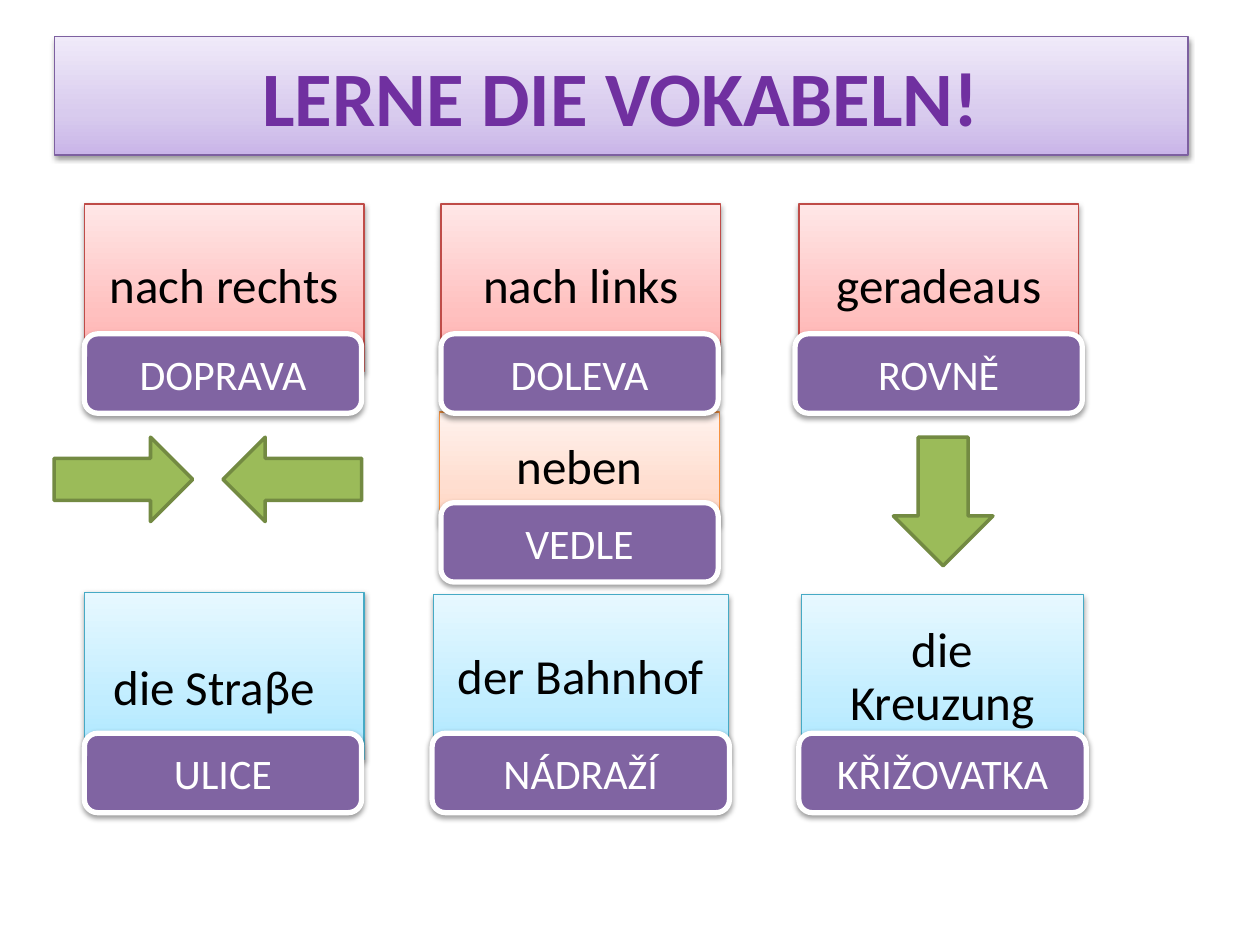
from dataclasses import dataclass

from pptx import Presentation
from pptx.dml.color import RGBColor
from pptx.enum.shapes import MSO_SHAPE as Shape
from pptx.enum.text import MSO_ANCHOR as Anchor, PP_ALIGN as Align
from pptx.oxml import parse_xml
from pptx.oxml.ns import nsdecls, qn
from pptx.util import Inches, Pt

GRID_COLS, GRID_ROWS = 100, 75


@dataclass(frozen=True)
class Theme:
    font: str = "Calibri"
    title_size: int = 44
    word_size: int = 28
    label_size: int = 24
    spacer_size: int = 52
    title_text: str = "7030A0"
    word_text: str = "000000"
    label_text: str = "FFFFFF"
    label_fill: str = "8064A2"
    label_line: str = "FFFFFF"
    arrow_fill: str = "9BBB59"
    arrow_line: str = "738A42"
    # Each palette: outline, then gradient colours from bottom to top
    purple: tuple = ("7D60A0", "C9B5E8", "D8CBEE", "F0EAF9")
    red: tuple = ("BF4C48", "FFA6A5", "FFC0BF", "FFE7E7")
    orange: tuple = ("F69240", "FFD2BD", "FFDED0", "FFF2ED")
    blue: tuple = ("46AAC5", "A7E6FF", "C1EDFF", "E7F8FF")


class VocabularyPage:
    def __init__(self, deck, theme):
        self.theme = theme
        self.page = deck.slides.add_slide(deck.slide_layouts[5])
        self.cell_width = deck.slide_width / GRID_COLS
        self.cell_height = deck.slide_height / GRID_ROWS

    def box(self, col, row, cols, rows):
        """Turn grid cells into left, top, width and height."""
        return (round(col * self.cell_width), round(row * self.cell_height),
                round(cols * self.cell_width), round(rows * self.cell_height))

    def add_plain(self, kind, cells):
        shape = self.page.shapes.add_shape(kind, *self.box(*cells))
        shape.shadow.inherit = False
        return shape

    def outline(self, shape, color, width):
        shape.line.color.rgb = RGBColor.from_string(color)
        shape.line.width = Pt(width)

    def paint(self, shape, color):
        shape.fill.solid()
        shape.fill.fore_color.rgb = RGBColor.from_string(color)

    def gloss(self, shape, palette):
        """Apply a three-stop gradient, a thin outline and a shadow."""
        line, *colors = palette
        shape.fill.gradient()
        shape.fill.gradient_angle = 90
        stops = shape._element.spPr.find(".//" + qn("a:gsLst"))
        for old in list(stops):
            stops.remove(old)
        for percent, color in zip((0, 35, 100), colors):
            stops.append(parse_xml(
                f'<a:gs {nsdecls("a")} pos="{percent * 1000}">'
                f'<a:srgbClr val="{color}"/></a:gs>'))
        self.outline(shape, line, 0.75)
        self.drop_shadow(shape)

    def drop_shadow(self, shape):
        shape.shadow.inherit = False
        shape._element.spPr.find(qn("a:effectLst")).append(parse_xml(
            f'<a:outerShdw {nsdecls("a")} blurRad="40000" dist="20000" '
            'dir="5400000" rotWithShape="0"><a:srgbClr val="000000">'
            '<a:alpha val="38000"/></a:srgbClr></a:outerShdw>'))

    def set_text(self, shape, text, size, color, bold=False, spacing=1.0, inset=0.1):
        frame = shape.text_frame
        layout = {"word_wrap": True, "vertical_anchor": Anchor.MIDDLE,
                  "margin_left": Inches(inset), "margin_right": Inches(inset)}
        for name, value in layout.items():
            setattr(frame, name, value)
        para = frame.paragraphs[0]
        para.alignment = Align.CENTER
        para.line_spacing = spacing
        self.add_span(para, text, size, color, bold)
        return para

    def add_span(self, para, text, size, color, bold=False):
        span = para.add_run()
        span.text = text
        style = {"name": self.theme.font, "size": Pt(size), "bold": bold}
        for name, value in style.items():
            setattr(span.font, name, value)
        span.font.color.rgb = RGBColor.from_string(color)

    def title(self, text, cells):
        holder = self.page.shapes.title
        holder.left, holder.top, holder.width, holder.height = self.box(*cells)
        self.gloss(holder, self.theme.purple)
        self.set_text(holder, text, self.theme.title_size, self.theme.title_text, bold=True)

    def word_card(self, text, palette, cells):
        card = self.add_plain(Shape.RECTANGLE, cells)
        self.gloss(card, palette)
        word = text.rstrip()
        para = self.set_text(card, word, self.theme.word_size, self.theme.word_text,
                             spacing=0.9, inset=0.12)
        if word != text:
            self.add_span(para, " ", self.theme.spacer_size, self.theme.word_text)

    def label(self, text, cells):
        plate = self.add_plain(Shape.FLOWCHART_ALTERNATE_PROCESS, cells)
        self.paint(plate, self.theme.label_fill)
        self.outline(plate, self.theme.label_line, 3)
        self.drop_shadow(plate)
        self.set_text(plate, text, self.theme.label_size, self.theme.label_text)

    def arrow(self, kind, cells):
        arrow = self.add_plain(kind, cells)
        self.paint(arrow, self.theme.arrow_fill)
        self.outline(arrow, self.theme.arrow_line, 2)


def main():
    deck = Presentation()
    deck.slide_width, deck.slide_height = Inches(10), Inches(7.5)
    theme = Theme()
    page = VocabularyPage(deck, theme)
    page.title("LERNE DIE VOKABELN!", (4.3, 2.9, 90, 9.4))

    left, middle, right = 6.7, 35, 63.4
    top_row, bottom_row = 16.2, 47.2
    tall, label_rows = 13.3, 6.3
    top_label, middle_label, bottom_label = 26.5, 39.9, 58.2
    # word, palette, card cells, translation, label column, row and width
    vocabulary = [
        ("nach rechts", theme.red, (left, top_row, 22.2, tall),
         "DOPRAVA", (left, top_label, 22)),
        ("nach links", theme.red, (middle, top_row, 22.2, tall),
         "DOLEVA", (middle, top_label, 22)),
        ("geradeaus", theme.red, (right, top_row, 22.2, tall),
         "ROVNĚ", (63.1, top_label, 22.8)),
        ("neben", theme.orange, (34.9, 32.7, 22.2, 8.9),
         "VEDLE", (middle, middle_label, 22)),
        ("die Straβe ", theme.blue, (left, 47, 22.2, tall),
         "ULICE", (left, bottom_label, 22)),
        ("der Bahnhof", theme.blue, (34.4, bottom_row, 23.4, tall),
         "NÁDRAŽÍ", (34.3, bottom_label, 23.6)),
        ("die Kreuzung", theme.blue, (63.6, bottom_row, 22.4, tall),
         "KŘIŽOVATKA", (right, bottom_label, 22.8)),
    ]
    for word, palette, cells, _, _ in vocabulary:
        page.word_card(word, palette, cells)
    for _, _, _, translation, cells in vocabulary:
        page.label(translation, (*cells, label_rows))

    arrow_row = 34.7
    for kind, col, cols, rows in [(Shape.DOWN_ARROW, 70.9, 7.9, 10.2),
                                  (Shape.RIGHT_ARROW, 4.3, 11, 6.7),
                                  (Shape.LEFT_ARROW, 17.7, 11, 6.7)]:
        page.arrow(kind, (col, arrow_row, cols, rows))
    deck.save("out.pptx")


if __name__ == "__main__":
    main()
